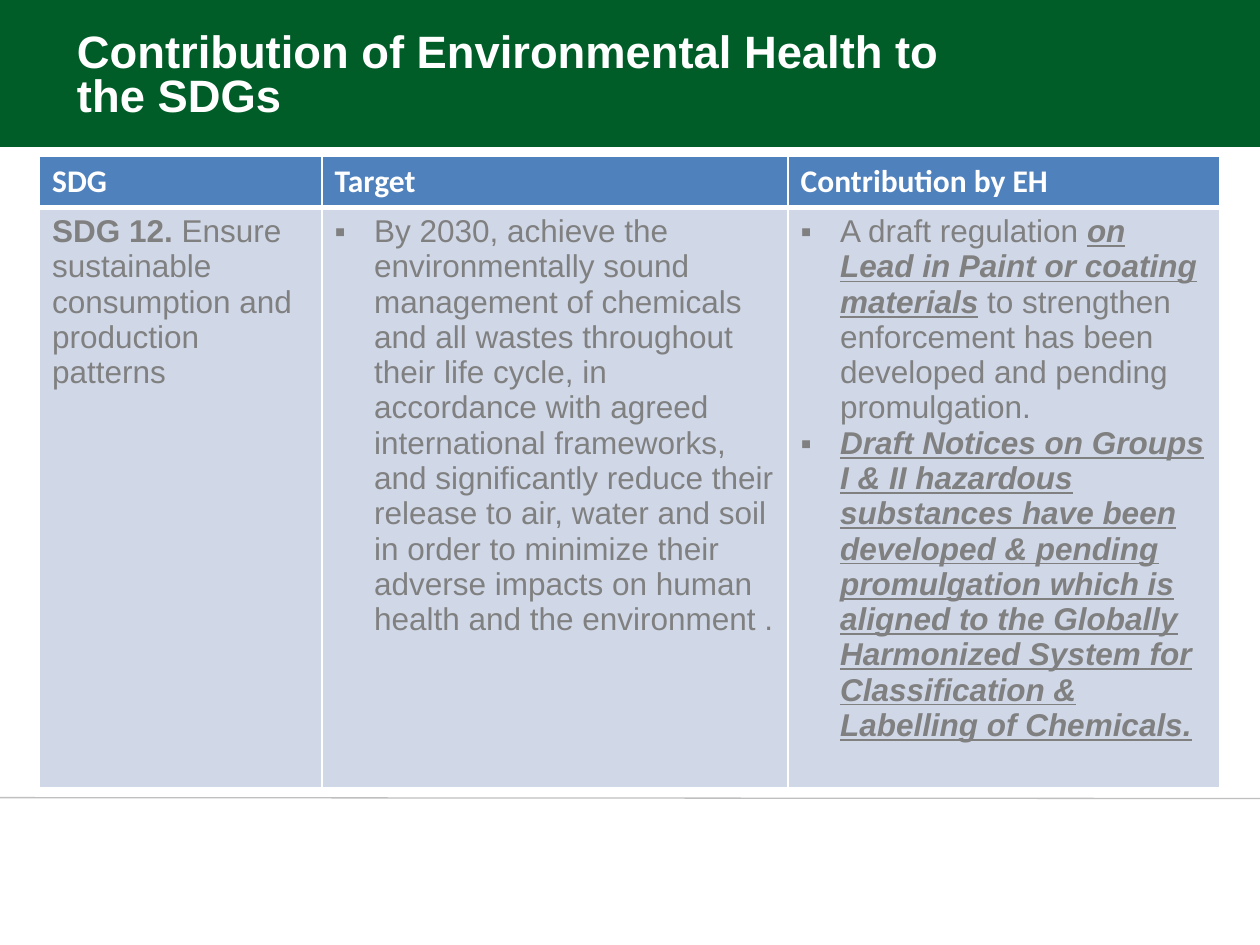
from lxml.etree import SubElement
from pptx import Presentation
from pptx.dml.color import RGBColor
from pptx.enum.shapes import MSO_CONNECTOR as Connector, MSO_SHAPE as Shape
from pptx.enum.text import MSO_ANCHOR as Anchor
from pptx.oxml.ns import qn
from pptx.util import Pt

GREEN = RGBColor(0x00, 0x5D, 0x28)
WHITE = RGBColor(0xFF, 0xFF, 0xFF)
BLUE = RGBColor(0x4F, 0x81, 0xBD)
PALE_BLUE = RGBColor(0xD0, 0xD8, 0xE8)
GREY = RGBColor(0x80, 0x80, 0x80)
RULE_GREY = RGBColor(0xBF, 0xBF, 0xBF)

PLAIN, BOLD, STRESSED = "plain", "bold", "stressed"
BULLET_INDENT = 22.5
COLUMN_WIDTHS = (161.5, 266.3, 246.7)
ROW_HEIGHTS = (29.2, 309)
HEADINGS = ("SDG", "Target", "Contribution by EH")

GOAL = [[("SDG 12. ", BOLD),
         ("Ensure sustainable consumption and production patterns", PLAIN)]]
TARGET = [[("By 2030, achieve the environmentally sound management of chemicals "
            "and all wastes throughout their life cycle, in accordance with agreed "
            "international frameworks, and significantly reduce their release to "
            "air, water and soil in order to minimize their adverse impacts on "
            "human health and the environment .", PLAIN)]]
CONTRIBUTION = [
    [("A draft regulation ", PLAIN),
     ("on Lead in Paint or coating materials", STRESSED),
     (" to strengthen enforcement has been developed and pending promulgation.", PLAIN)],
    [("Draft Notices on Groups I & II hazardous substances have been developed & "
      "pending promulgation which is aligned to the Globally Harmonized System for "
      "Classification & Labelling of Chemicals.", STRESSED)],
]


def style_font(font, name, size, colour, bold):
    font.name, font.size, font.bold = name, Pt(size), bold
    font.color.rgb = colour


def add_banner(slide):
    banner = slide.shapes.add_shape(Shape.RECTANGLE, 0, 0, Pt(720), Pt(84))
    banner.shadow.inherit = False
    banner.fill.solid()
    banner.fill.fore_color.rgb = GREEN
    banner.line.fill.background()


def add_footer_rule(slide):
    rule = slide.shapes.add_connector(
        Connector.STRAIGHT, 0, Pt(455.8), Pt(720), Pt(456.3))
    rule.line.color.rgb = RULE_GREY
    rule.line.width = Pt(0.75)
    SubElement(rule._element.spPr, qn("a:effectLst"))


def add_title(slide, wording):
    title = slide.shapes.add_textbox(Pt(36.9), Pt(9.4), Pt(527), Pt(63.4))
    frame = title.text_frame
    frame.word_wrap = True
    frame.vertical_anchor = Anchor.BOTTOM
    frame.text = wording
    heading = frame.paragraphs[0]
    heading.line_spacing = 0.8
    style_font(heading.runs[0].font, "Arial", 25.9, WHITE, True)


def style_cell(cell, colour, top=1, bottom=1):
    properties = cell._tc.get_or_add_tcPr()
    for side, width in (("L", 1), ("R", 1), ("T", top), ("B", bottom)):
        border = SubElement(properties, qn(f"a:ln{side}"), w=str(Pt(width)))
        fill = SubElement(border, qn("a:solidFill"))
        SubElement(fill, qn("a:srgbClr"), val=str(WHITE))
    cell.fill.solid()
    cell.fill.fore_color.rgb = colour


def add_bullet(paragraph):
    properties = paragraph._p.get_or_add_pPr()
    properties.set("marL", str(Pt(BULLET_INDENT)))
    properties.set("indent", str(-Pt(BULLET_INDENT)))
    SubElement(properties, qn("a:buFont"), typeface="Arial")
    SubElement(properties, qn("a:buChar"), char="▪")


def fill_heading(cell, wording):
    style_cell(cell, BLUE, bottom=3)
    cell.text_frame.text = wording
    style_font(cell.text_frame.paragraphs[0].runs[0].font, "Calibri", 18, WHITE, True)


def fill_body(cell, passages, bulleted):
    style_cell(cell, PALE_BLUE, top=3)
    frame = cell.text_frame
    for number, passage in enumerate(passages):
        paragraph = frame.add_paragraph() if number else frame.paragraphs[0]
        if bulleted:
            add_bullet(paragraph)
        for wording, emphasis in passage:
            run = paragraph.add_run()
            run.text = wording
            style_font(run.font, "Arial", 18, GREY, emphasis != PLAIN)
            run.font.italic = run.font.underline = emphasis == STRESSED


def add_goal_table(slide):
    table = slide.shapes.add_table(
        2, 3, Pt(22.6), Pt(89.5), Pt(sum(COLUMN_WIDTHS)), Pt(sum(ROW_HEIGHTS))).table
    for column, width in zip(table.columns, COLUMN_WIDTHS):
        column.width = Pt(width)
    for row, height in zip(table.rows, ROW_HEIGHTS):
        row.height = Pt(height)
    for index, heading in enumerate(HEADINGS):
        fill_heading(table.cell(0, index), heading)
    for index, passages in enumerate((GOAL, TARGET, CONTRIBUTION)):
        fill_body(table.cell(1, index), passages, bulleted=index > 0)


def main():
    """Build the slide on the SDG contribution of environmental health."""
    deck = Presentation()
    deck.slide_width, deck.slide_height = Pt(720), Pt(540)
    slide = deck.slides.add_slide(deck.slide_layouts[6])
    add_banner(slide)
    add_footer_rule(slide)
    add_title(slide, "Contribution of Environmental Health to the SDGs")
    add_goal_table(slide)
    deck.save("out.pptx")


if __name__ == "__main__":
    main()
